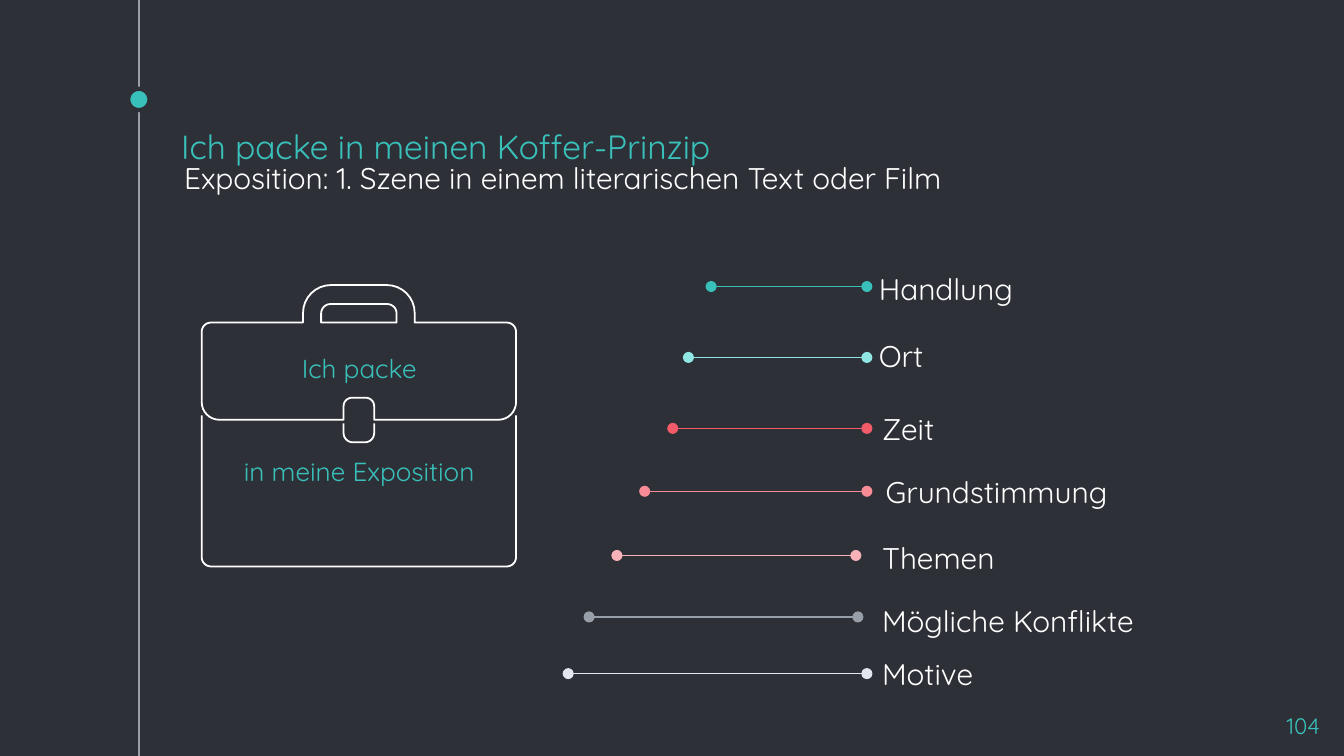
from math import cos, sin, pi, hypot

from pptx import Presentation
from pptx.dml.color import RGBColor
from pptx.enum.shapes import MSO_CONNECTOR, MSO_SHAPE
from pptx.enum.text import MSO_ANCHOR as ANCHOR, PP_ALIGN as ALIGN
from pptx.oxml.ns import qn
from pptx.util import Pt
from lxml.etree import SubElement

TEAL, WHITE, GREY, DARK = "39C0BA", "FFFFFF", "999FA9", "2E3037"
rgb = RGBColor.from_string


def add_text(text, left, top, width, height, size, color,
             inset=(7.2, 3.6), align=ALIGN.LEFT, anchor=ANCHOR.TOP):
    frame = slide.shapes.add_textbox(Pt(left), Pt(top), Pt(width), Pt(height)).text_frame
    frame.word_wrap = True
    frame.vertical_anchor = anchor
    frame.margin_left = frame.margin_right = Pt(inset[0])
    frame.margin_top = frame.margin_bottom = Pt(inset[1])
    paragraph = frame.paragraphs[0]
    paragraph.text = text
    paragraph.alignment = align
    paragraph.font.name = "Quicksand"
    paragraph.font.size = Pt(size)
    paragraph.font.color.rgb = rgb(color)


def add_line(x1, y1, x2, y2, color, ends=None):
    """Draw a straight line; ends names the arrowhead used on both ends."""
    line = slide.shapes.add_connector(MSO_CONNECTOR.STRAIGHT, Pt(x1), Pt(y1), Pt(x2), Pt(y2))
    line.line.color.rgb = rgb(color)
    line.line.width = Pt(0.75)
    if ends:
        for tag in ("a:headEnd", "a:tailEnd"):
            SubElement(line.line._get_or_add_ln(), qn(tag), type=ends)
    SubElement(line._element.spPr, qn("a:effectLst"))


prs = Presentation()
prs.slide_width, prs.slide_height = Pt(720), Pt(405)
slide = prs.slides.add_slide(prs.slide_layouts[6])
slide.background.fill.solid()
slide.background.fill.fore_color.rgb = rgb(DARK)

# Timeline at the left edge
add_line(74.4, 0, 74.4, 405, GREY)
dot = slide.shapes.add_shape(MSO_SHAPE.OVAL, Pt(68.7), Pt(47.6), Pt(11.4), Pt(11.4))
dot.shadow.inherit = False
dot.fill.solid()
dot.fill.fore_color.rgb = rgb(TEAL)
dot.line.color.rgb = rgb(DARK)
dot.line.width = Pt(2.25)

# Headings and page number
add_text("Ich packe in meinen Koffer-Prinzip", 90, 60, 540, 37, 18, TEAL, inset=(7.2, 7.2))
add_text("Exposition: 1. Szene in einem literarischen Text oder Film",
         91.6, 82.1, 457, 26.6, 16, WHITE)
add_text("104", 671, 374.4, 43.2, 24.5, 12, TEAL, inset=(7.2, 7.2), align=ALIGN.RIGHT)

# Briefcase: left halves as (distance from the centre, y, corner radius)
CENTER = 192.25
handle_flap = [(29.9, 152.7, 15), (29.9, 172.8, 0), (84.2, 172.8, 5),
               (84.2, 224.9, 9.5), (8.2, 224.9, 0), (8.2, 213.1, 4.5)]
handle_hole = [(20.2, 162.9, 5), (20.2, 172.8, 0)]
clasp = [(8.2, 226.8, 0), (8.2, 237, 5)]
body = [(84.2, 222.5, 0), (84.2, 303.5, 5)]
STEPS = 8

briefcase = slide.shapes.add_group_shape().shapes
for halves, closed in (([handle_flap, handle_hole], True), ([clasp], False), ([body], False)):
    builder = None
    for half in halves:
        corners = ([(CENTER - dx, y, r) for dx, y, r in half]
                   + [(CENTER + dx, y, r) for dx, y, r in reversed(half)])
        outline = []
        for i, (x, y, r) in enumerate(corners):
            if not r:
                outline.append((Pt(x), Pt(y)))
                continue
            (ax, ay, _), (bx, by, _) = corners[i - 1], corners[(i + 1) % len(corners)]
            before, after = hypot(ax - x, ay - y), hypot(bx - x, by - y)
            ux, uy = (ax - x) / before, (ay - y) / before
            vx, vy = (bx - x) / after, (by - y) / after
            for step in range(STEPS + 1):
                angle = pi / 2 * step / STEPS
                u, v = 1 - sin(angle), 1 - cos(angle)
                outline.append((Pt(x + r * (ux * u + vx * v)), Pt(y + r * (uy * u + vy * v))))
        if builder:
            builder.move_to(*outline[0])
        else:
            builder = briefcase.build_freeform(*outline[0], scale=1.0)
        builder.add_line_segments(outline[1:], close=closed)
    part = builder.convert_to_shape()
    part.shadow.inherit = False
    part.fill.background()
    part.line.color.rgb = rgb(WHITE)
    part.line.width = Pt(0.96)

for caption, top in (("Ich packe", 185), ("in meine Exposition", 240.5)):
    add_text(caption, 108, top, 169, 24.5, 14, TEAL, align=ALIGN.CENTER)

# Contents: label, its left and top, line start, line end, line y, colour
contents = [
    ("Handlung", 470.9, 141.1, 381, 464.4, 153.5, TEAL),
    ("Ort", 470.9, 176.7, 368.8, 464.4, 191.5, "90E6E2"),
    ("Zeit", 472.6, 216, 360.4, 464.4, 229.5, "F35B69"),
    ("Grundstimmung", 474.5, 249.8, 345.4, 464.4, 263.2, "F88C96"),
    ("Themen", 472.6, 284.9, 330.5, 458.5, 297.6, "FAB2B9"),
    ("Mögliche Konflikte", 472.6, 318.5, 315.6, 459.6, 330.5, GREY),
    ("Motive", 472.6, 347.4, 304.4, 464.4, 360.9, "E2E7EE"),
]
for label, left, top, start, end, y, color in contents:
    add_line(start, y, end, y, color, ends="oval")
    add_text(label, left, top, 200, 27.4, 16, WHITE, inset=(0, 0), anchor=ANCHOR.MIDDLE)

prs.save("out.pptx")
